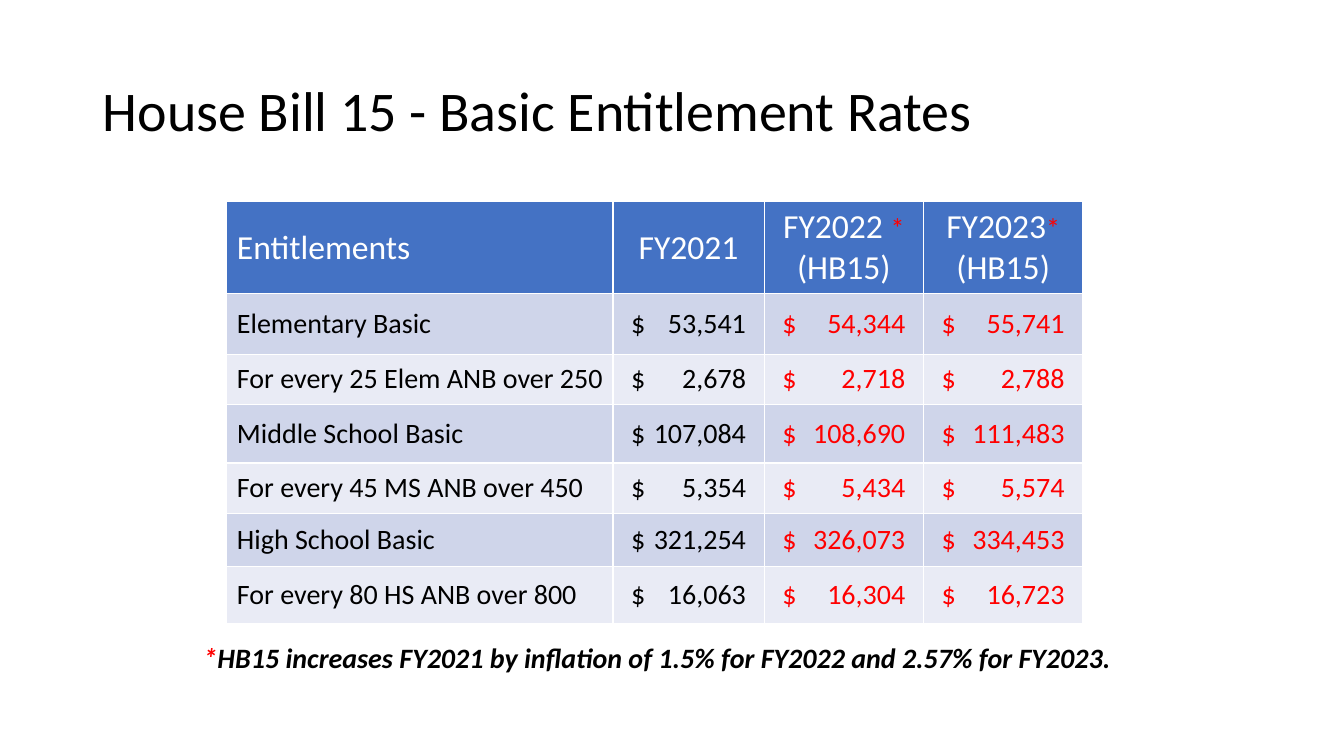
from dataclasses import dataclass

from lxml import etree
from pptx import Presentation
from pptx.dml.color import RGBColor
from pptx.enum.text import MSO_ANCHOR, MSO_AUTO_SIZE, PP_ALIGN
from pptx.oxml.ns import qn
from pptx.util import Inches, Pt

LEFT, CENTER = PP_ALIGN.LEFT, PP_ALIGN.CENTER
MIDDLE = MSO_ANCHOR.MIDDLE
NO_FIT, GROW = MSO_AUTO_SIZE.NONE, MSO_AUTO_SIZE.SHAPE_TO_FIT_TEXT


@dataclass(frozen=True)
class Theme:
    """Colours, font and type sizes of the slide."""
    font: str = "Calibri"
    ink: str = "000000"
    paper: str = "FFFFFF"
    alert: str = "FF0000"
    head: str = "4472C4"
    bands: tuple = ("CFD5EA", "E9EBF5")
    title: int = 40
    label: int = 24
    body: int = 20


THEME = Theme()
WIDTHS = (3.83, 1.5, 1.58, 1.58)
HEIGHTS = (0.89, 0.6, 0.5, 0.58, 0.5, 0.53, 0.56)
HEADS = ("Entitlements", "FY2021", "FY2022 * (HB15)", "FY2023* (HB15)")
RATES = (
    ("Elementary Basic", "53,541", "54,344", "55,741"),
    ("For every 25 Elem ANB over 250", "2,678", "2,718", "2,788"),
    ("Middle School Basic", "107,084", "108,690", "111,483"),
    ("For every 45 MS ANB over 450", "5,354", "5,434", "5,574"),
    ("High School Basic", "321,254", "326,073", "334,453"),
    ("For every 80 HS ANB over 800", "16,063", "16,304", "16,723"),
)
NOTE = "*HB15 increases FY2021 by inflation of 1.5% for FY2022 and 2.57% for FY2023."
INSET = 0.18
SLIM = 0.03


def style(run, size, color, bold=False, italic=False):
    """Format one run."""
    font = run.font
    font.name, font.size = THEME.font, Pt(size)
    font.bold, font.italic = bold, italic
    font.color.rgb = RGBColor.from_string(color)


def write(para, text, size, color, **face):
    """Write text with any asterisk in the alert colour at body size."""
    before, star, after = text.partition("*")
    for part in filter(None, (before, star, after)):
        run = para.add_run()
        run.text = part
        if part == "*":
            style(run, THEME.body, THEME.alert, **face)
        else:
            style(run, size, color, **face)


def paint(cell, color):
    """Fill a cell and draw its white borders."""
    cell.fill.solid()
    cell.fill.fore_color.rgb = RGBColor.from_string(color)
    props = cell._tc.get_or_add_tcPr()
    for spot, side in enumerate(("a:lnL", "a:lnR", "a:lnT", "a:lnB")):
        line = etree.Element(qn(side), w=str(Pt(1)))
        fill = etree.SubElement(line, qn("a:solidFill"))
        etree.SubElement(fill, qn("a:srgbClr"), val=THEME.paper)
        props.insert(spot, line)


def set_tab(para, place):
    """Add a right tab stop to a paragraph."""
    tabs = etree.SubElement(para._p.get_or_add_pPr(), qn("a:tabLst"))
    etree.SubElement(tabs, qn("a:tab"), pos=str(Inches(place)), algn="r")


def add_title(slide, box):
    """Place the slide title in its box."""
    title = slide.shapes.title
    title.left, title.top, title.width, title.height = map(Inches, box)
    frame = title.text_frame
    frame.auto_size, frame.vertical_anchor = NO_FIT, MIDDLE
    frame.text = "House Bill 15 - Basic Entitlement Rates"
    para = frame.paragraphs[0]
    para.alignment, para.line_spacing = LEFT, 0.9
    style(para.runs[0], THEME.title, THEME.ink)


def add_rates(slide, box):
    """Place the table of entitlement rates in its box."""
    table = slide.shapes.add_table(
        len(HEIGHTS), len(WIDTHS), *map(Inches, box)).table
    for row, height in zip(table.rows, HEIGHTS):
        row.height = Inches(height)
    for col, width in enumerate(WIDTHS):
        table.columns[col].width = Inches(width)
        cell = table.cell(0, col)
        cell.vertical_anchor = MIDDLE
        paint(cell, THEME.head)
        para = cell.text_frame.paragraphs[0]
        para.alignment = CENTER if col else LEFT
        write(para, HEADS[col], THEME.label, THEME.paper)
        for row, rates in enumerate(RATES, 1):
            cell = table.cell(row, col)
            cell.vertical_anchor = MIDDLE
            cell.margin_right = Inches(SLIM)
            paint(cell, THEME.bands[(row - 1) % 2])
            para = cell.text_frame.paragraphs[0]
            para.alignment = LEFT
            text = rates[col]
            if col:
                cell.margin_left = Inches(INSET)
                set_tab(para, width - 2 * INSET)
                text = "$\t" + text
            color = THEME.alert if col > 1 else THEME.ink
            write(para, text, THEME.body, color)


def add_note(slide, box):
    """Place the footnote in its box."""
    frame = slide.shapes.add_textbox(*map(Inches, box)).text_frame
    frame.word_wrap, frame.auto_size = True, GROW
    write(frame.paragraphs[0], NOTE, THEME.body, THEME.ink,
          bold=True, italic=True)


def main():
    """Build and save the slide."""
    deck = Presentation()
    deck.slide_width, deck.slide_height = Inches(13.33), Inches(7.5)
    slide = deck.slides.add_slide(deck.slide_layouts[5])
    add_title(slide, (0.92, 0.4, 11.5, 1.45))
    add_rates(slide, (2.25, 2, sum(WIDTHS), sum(HEIGHTS)))
    add_note(slide, (1.92, 6.31, 9.33, 0.44))
    deck.save("out.pptx")


if __name__ == "__main__":
    main()
